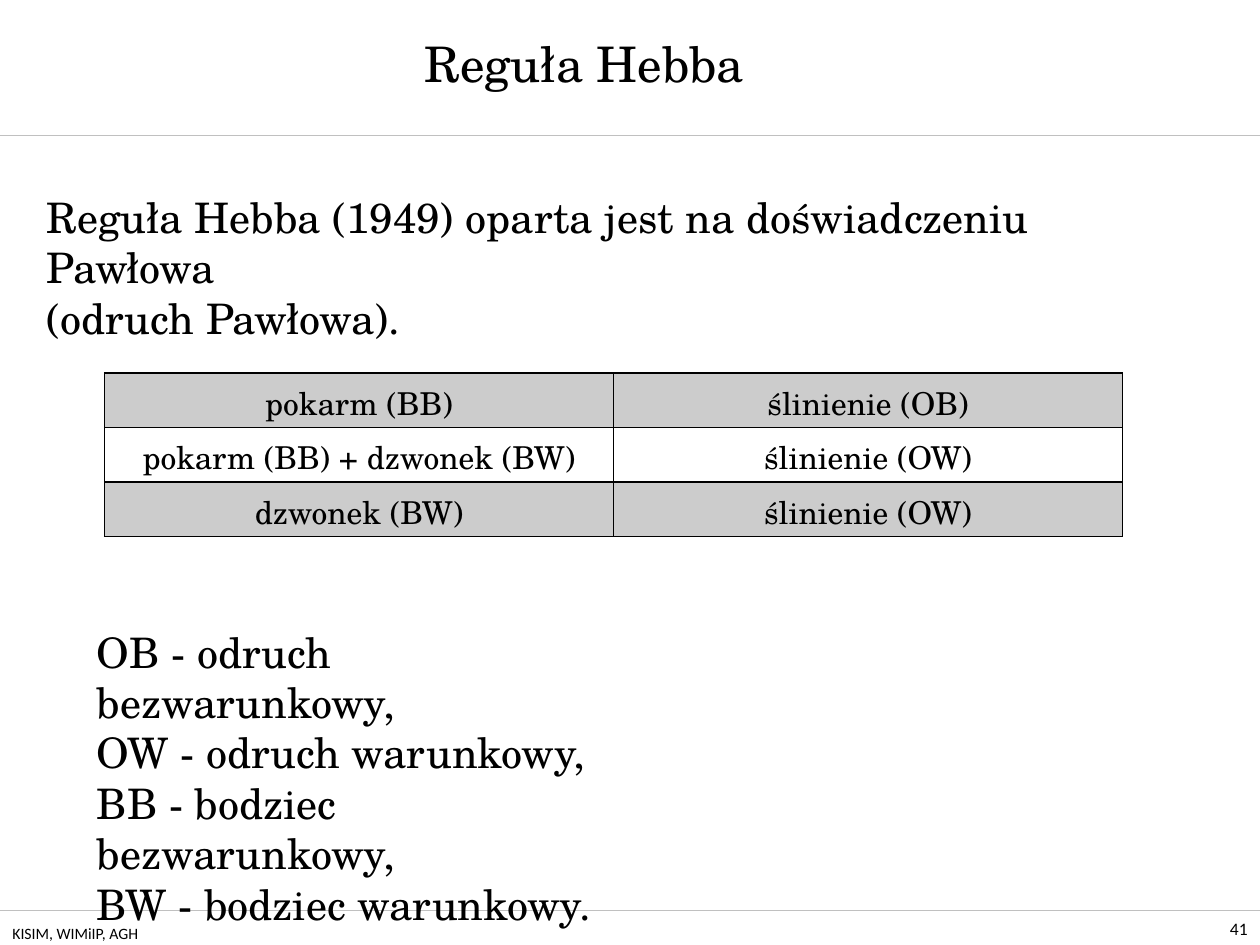
from lxml import etree
from pptx import Presentation
from pptx.dml.color import RGBColor
from pptx.enum.shapes import MSO_CONNECTOR, MSO_SHAPE
from pptx.enum.text import MSO_ANCHOR, PP_ALIGN
from pptx.oxml.ns import qn
from pptx.util import Inches, Pt

LEFT, MID, RIGHT = PP_ALIGN.LEFT, PP_ALIGN.CENTER, PP_ALIGN.RIGHT
TOP, CORE, BASE = MSO_ANCHOR.TOP, MSO_ANCHOR.MIDDLE, MSO_ANCHOR.BOTTOM
LINE, RECT = MSO_CONNECTOR.STRAIGHT, MSO_SHAPE.RECTANGLE
WIDE, HIGH = Inches(10), Inches(7.5)
SERIF, SANS = "TeX Gyre Schola", "Calibri"
INK, PAPER, RULE = "000000", "FFFFFF", "C0C0C0"
SIDES = ("lnL", "lnR", "lnT", "lnB")

INTRO = "Reguła Hebba (1949) oparta jest na doświadczeniu Pawłowa \n(odruch Pawłowa)."
TERMS = "\n".join([
    "OB - odruch bezwarunkowy,",
    "OW - odruch warunkowy,",
    "BB - bodziec bezwarunkowy,",
    "BW - bodziec warunkowy.",
])
ROWS = [
    ("pokarm (BB)", "ślinienie (OB)"),
    ("pokarm (BB) + dzwonek (BW)", "ślinienie (OW)"),
    ("dzwonek (BW)", "ślinienie (OW)"),
]


def paint(color, value):
    color.rgb = RGBColor.from_string(value)


def place(left, top, wide, high):
    return [int(part * full / 100) for part, full in
            zip((left, top, wide, high), (WIDE, HIGH, WIDE, HIGH))]


def write(frame, text, size, face=SERIF, align=LEFT):
    para = frame.paragraphs[0]
    para.text = text
    para.alignment = align
    for run in para.runs:
        for key, value in {"size": Pt(size), "name": face}.items():
            setattr(run.font, key, value)
        paint(run.font.color, INK)


def add_rule(slide, top):
    x, y, wide, _ = place(0, top, 100, 0)
    rule = slide.shapes.add_connector(LINE, x, y, x + wide, y)
    rule.line.width = Pt(0.25)
    paint(rule.line.color, RULE)
    etree.SubElement(rule._element.spPr, qn("a:effectLst"))


def add_text(slide, area, text, size, face=SERIF, align=LEFT, anchor=TOP):
    frame = slide.shapes.add_textbox(*place(*area)).text_frame
    for key, value in {"word_wrap": True, "vertical_anchor": anchor}.items():
        setattr(frame, key, value)
    write(frame, text, size, face, align)


def add_title(slide, area, text):
    shape = slide.shapes.add_shape(RECT, *place(*area))
    shape.shadow.inherit = False
    shape.fill.solid()
    paint(shape.fill.fore_color, PAPER)
    shape.line.fill.background()
    shape.text_frame.vertical_anchor = CORE
    write(shape.text_frame, text, 28, align=MID)


def shade(cell, share):
    cell.fill.solid()
    paint(cell.fill.fore_color, INK)
    tint = cell._tc.tcPr.find(".//" + qn("a:srgbClr"))
    etree.SubElement(tint, qn("a:alpha"), val=str(share * 1000))


def frame_cell(cell):
    props = cell._tc.get_or_add_tcPr()
    for spot, side in enumerate(SIDES):
        edge = etree.Element(qn("a:" + side), w=str(Pt(1)))
        fill = etree.SubElement(edge, qn("a:solidFill"))
        etree.SubElement(fill, qn("a:srgbClr"), val=INK)
        props.insert(spot, edge)


def add_grid(slide, area, rows):
    shape = slide.shapes.add_table(len(rows), len(rows[0]), *place(*area))
    table = shape.table
    for key in ("first_row", "horz_banding"):
        setattr(table, key, False)
    for r, row in enumerate(rows):
        for c, text in enumerate(row):
            cell = table.cell(r, c)
            write(cell.text_frame, text, 18, align=MID)
            if r % 2:
                cell.fill.background()
            else:
                shade(cell, 20)
            frame_cell(cell)


def main():
    deck = Presentation()
    deck.slide_width, deck.slide_height = WIDE, HIGH
    slide = deck.slides.add_slide(deck.slide_layouts[6])
    for top in (14.27, 96.27):
        add_rule(slide, top)
    add_text(slide, (94.9, 96.27, 5.1, 3.73), "41", 10, SANS, RIGHT, BASE)
    add_text(slide, (0, 97.07, 31.7, 2.93), "KISIM, WIMiIP, AGH", 9, SANS)
    add_text(slide, (2.7, 19.6, 92.1, 12), INTRO, 24)
    add_text(slide, (6.7, 65.6, 44.2, 22.67), TERMS, 24)
    add_title(slide, (13, 2.8, 66.7, 7.73), "Reguła Hebba")
    add_grid(slide, (8.3, 39.47, 80.8, 17.33), ROWS)
    deck.save("out.pptx")


if __name__ == "__main__":
    main()
